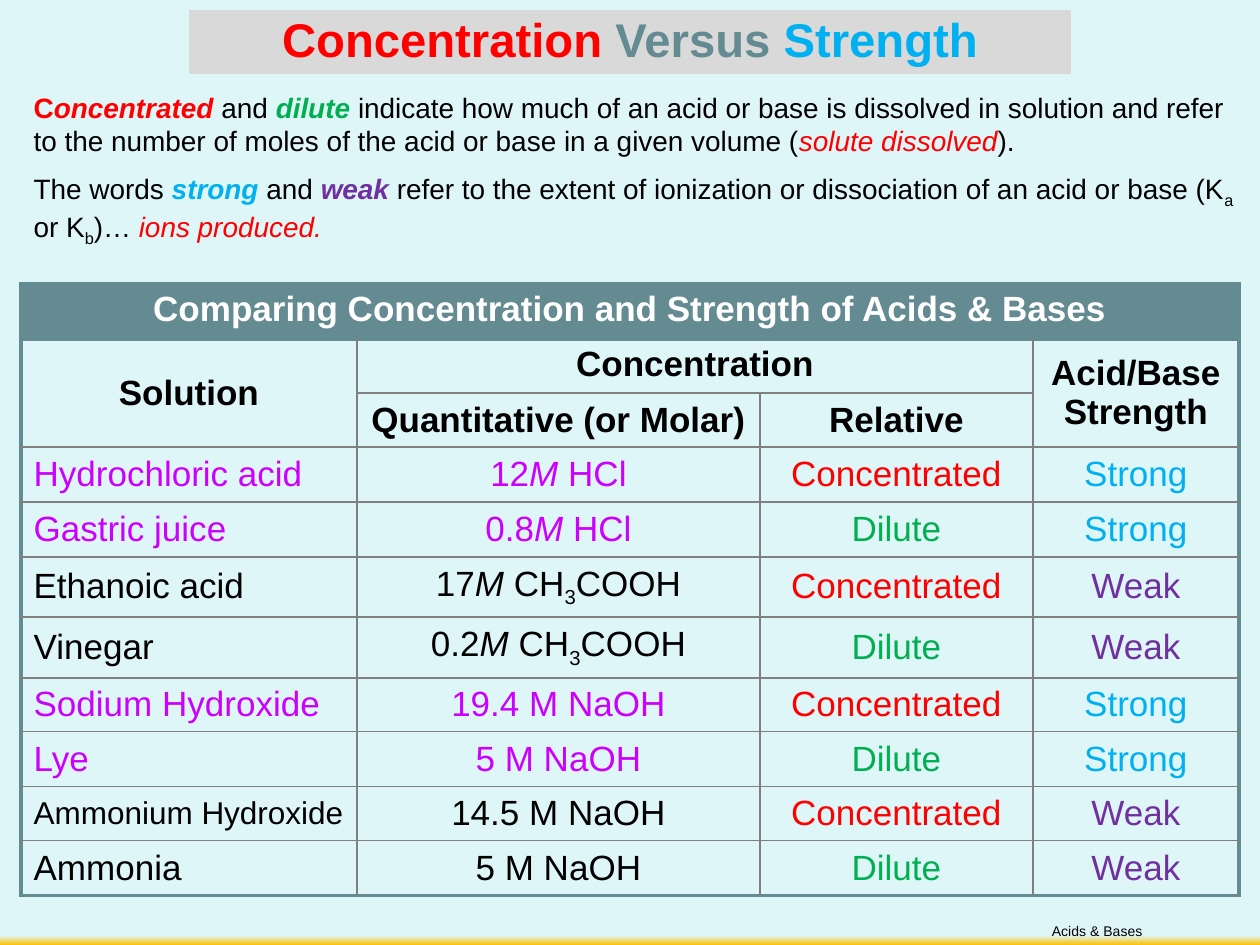
from dataclasses import dataclass
from itertools import pairwise
from lxml import etree
from pptx import Presentation
from pptx import util as u
from pptx.dml.color import RGBColor
from pptx.enum import text as t
from pptx.oxml.ns import qn

PX = 914400 // 126  # EMU in one px
FONT = "Arial"
HEX = {
    "black": "000000", "white": "FFFFFF", "red": "FF0000", "green": "00B050",
    "blue": "00B0F0", "purple": "7030A0", "pink": "CC00FF", "teal": "658B92",
    "gray": "808080", "silver": "D9D9D9", "pale": "DFF6F8", "gold": "FFC000",
}
LEFT, MID, RIGHT = t.PP_ALIGN.LEFT, t.PP_ALIGN.CENTER, t.PP_ALIGN.RIGHT
TOP, CENTER, BOTTOM = t.MSO_ANCHOR.TOP, t.MSO_ANCHOR.MIDDLE, t.MSO_ANCHOR.BOTTOM


@dataclass(frozen=True)
class Run:
    text: str
    color: str = "black"
    bold: bool = False
    slant: bool = False
    sub: bool = False


@dataclass(frozen=True)
class Row:
    name: str
    color: str
    amount: tuple[str, ...]  # "M" is slanted, a lone digit is a subscript
    dense: bool
    strong: bool
    size: int = 20


@dataclass(frozen=True)
class Head:
    text: str
    row: int
    col: int
    end: tuple[int, int]  # last row and column of the span
    color: str = "black"
    anchor: t.MSO_ANCHOR = CENTER


INTRO = [
    [Run("C", "red", bold=True), Run("oncentrated ", "red", True, True), Run("and "),
     Run("dilute ", "green", True, True),
     Run("indicate how much of an acid or base is dissolved in solution and refer "
         "to the number of moles of the acid or base in a given volume ("),
     Run("solute dissolved", "red", slant=True), Run(").")],
    [Run("The words "), Run("strong ", "blue", True, True), Run("and "),
     Run("weak ", "purple", True, True),
     Run("refer to the extent of ionization or dissociation of an acid or base (K"),
     Run("a", sub=True), Run(" or K"), Run("b", sub=True), Run(")… "),
     Run("ions produced.", "red", slant=True)],
]
HEADS = [
    Head("Comparing Concentration and Strength of Acids & Bases", 0, 0, (0, 3), "white", TOP),
    Head("Solution", 1, 0, (2, 0)),
    Head("Concentration", 1, 1, (1, 2), anchor=TOP),
    Head("Acid/Base Strength", 1, 3, (2, 3)),
    Head("Quantitative (or Molar)", 2, 1, (2, 1)),
    Head("Relative", 2, 2, (2, 2)),
]
ROWS = [
    Row("Hydrochloric acid", "pink", ("12", "M", " HCl"), True, True),
    Row("Gastric juice", "pink", ("0.8", "M", " HCl"), False, True),
    Row("Ethanoic acid", "black", ("17", "M", " CH", "3", "COOH"), True, False),
    Row("Vinegar", "black", ("0.2", "M", " CH", "3", "COOH"), False, False),
    Row("Sodium Hydroxide", "pink", ("19.4 M NaOH",), True, True),
    Row("Lye", "pink", ("5 M NaOH",), False, True),
    Row("Ammonium Hydroxide", "black", ("14.5 M NaOH",), True, False, 18),
    Row("Ammonia", "black", ("5 M NaOH",), False, False),
]
COLS = [21, 357, 760, 1033, 1239]
LINES = [284, 339, 393, 447, 502, 557, 617, 678, 732, 787, 841, 896]


def rgb(name: str) -> RGBColor:
    return RGBColor.from_string(HEX[name])


def place(shape, left: int, top: int, width: int, height: int, anchor) -> None:
    shape.left, shape.top = left * PX, top * PX
    shape.width, shape.height = width * PX, height * PX
    frame = shape.text_frame
    frame.word_wrap = True
    frame.auto_size = t.MSO_AUTO_SIZE.NONE
    frame.vertical_anchor = anchor


def write(para, runs: list[Run], size: float, align=LEFT) -> None:
    para.alignment = align
    para.space_before = u.Pt(0)
    for part in runs:
        run = para.add_run()
        run.text = part.text
        font = run.font
        font.name, font.size = FONT, u.Pt(size)
        font.bold, font.italic = part.bold, part.slant
        font.color.rgb = rgb(part.color)
        if part.sub:
            run._r.get_or_add_rPr().set("baseline", "-25000")


def fill_cell(cell, runs: list[Run], size: int = 20, align=MID, anchor=CENTER) -> None:
    cell.vertical_anchor = anchor
    write(cell.text_frame.paragraphs[0], runs, size, align)


def edge(cell, row: int, col: int) -> None:
    """Teal on the outer frame and round the top row, thin gray inside."""
    thick = {
        "L": col == 0 or row == 0,
        "R": col == len(COLS) - 2 or row == 0,
        "T": row <= 1,
        "B": row in (0, len(LINES) - 2),
    }
    props = cell._tc.get_or_add_tcPr()
    for spot, (side, wide) in enumerate(thick.items()):
        line = etree.Element(qn("a:ln" + side), w=str(u.Pt(2.25 if wide else 1)))
        solid = etree.SubElement(line, qn("a:solidFill"))
        etree.SubElement(solid, qn("a:srgbClr"), val=HEX["teal" if wide else "gray"])
        props.insert(spot, line)


def draw_table(slide) -> None:
    table = slide.shapes.add_table(
        len(LINES) - 1, len(COLS) - 1, COLS[0] * PX, LINES[0] * PX,
        (COLS[-1] - COLS[0]) * PX, (LINES[-1] - LINES[0]) * PX).table
    table.first_row = table.horz_banding = False
    for col, (a, b) in zip(table.columns, pairwise(COLS)):
        col.width = (b - a) * PX
    for row, (a, b) in zip(table.rows, pairwise(LINES)):
        row.height = (b - a) * PX
    for r, row in enumerate(table.rows):
        for c, cell in enumerate(row.cells):
            if r == 0:
                cell.fill.solid()
                cell.fill.fore_color.rgb = rgb("teal")
            else:
                cell.fill.background()
            edge(cell, r, c)

    # Heading cells
    for head in HEADS:
        cell = table.cell(head.row, head.col)
        if head.end != (head.row, head.col):
            cell.merge(table.cell(*head.end))
        fill_cell(cell, [Run(head.text, head.color, bold=True)], anchor=head.anchor)

    # Solutions
    for r, item in enumerate(ROWS, 3):
        name, amount, dense, power = (table.cell(r, c) for c in range(4))
        fill_cell(name, [Run(item.name, item.color)], item.size, LEFT)
        fill_cell(amount, [Run(s, item.color, slant=s == "M", sub=s == "3")
                           for s in item.amount])
        fill_cell(dense, [Run("Concentrated", "red") if item.dense
                          else Run("Dilute", "green")])
        fill_cell(power, [Run("Strong", "blue") if item.strong
                          else Run("Weak", "purple")])


def main() -> None:
    deck = Presentation()
    deck.slide_width, deck.slide_height = 1260 * PX, 945 * PX
    slide = deck.slides.add_slide(deck.slide_layouts[1])
    title, body = slide.placeholders

    # Pale ground with a gold band at the foot
    ground = slide.background.fill
    ground.gradient()
    ground.gradient_angle = 270
    for stop, (name, pos) in zip(ground.gradient_stops, [("pale", 0.99), ("gold", 1)]):
        stop.color.rgb, stop.position = rgb(name), pos

    # Intro
    place(body, 21, 84, 1229, 165, TOP)
    for i, runs in enumerate(INTRO):
        para = body.text_frame.paragraphs[0] if i == 0 else body.text_frame.add_paragraph()
        props = para._p.get_or_add_pPr()
        props.set("marL", "0")
        props.set("indent", "0")
        etree.SubElement(props, qn("a:buNone"))
        write(para, runs, 16)
        if i:
            para.space_before = u.Pt(8)

    # Title
    place(title, 189, 10, 882, 64, TOP)
    title.fill.solid()
    title.fill.fore_color.rgb = rgb("silver")
    para = title.text_frame.paragraphs[0]
    write(para, [Run("Concentration", "red", True), Run(" Versus ", "teal", True),
                 Run("Strength", "blue", True)], 27, MID)
    para.line_spacing = 0.9

    # Footer
    foot = slide.shapes.add_textbox(0, 0, PX, PX)
    place(foot, 567, 903, 588, 42, BOTTOM)
    write(foot.text_frame.paragraphs[0], [Run("Acids & Bases")], 8, RIGHT)

    draw_table(slide)
    deck.save("out.pptx")


if __name__ == "__main__":
    main()
